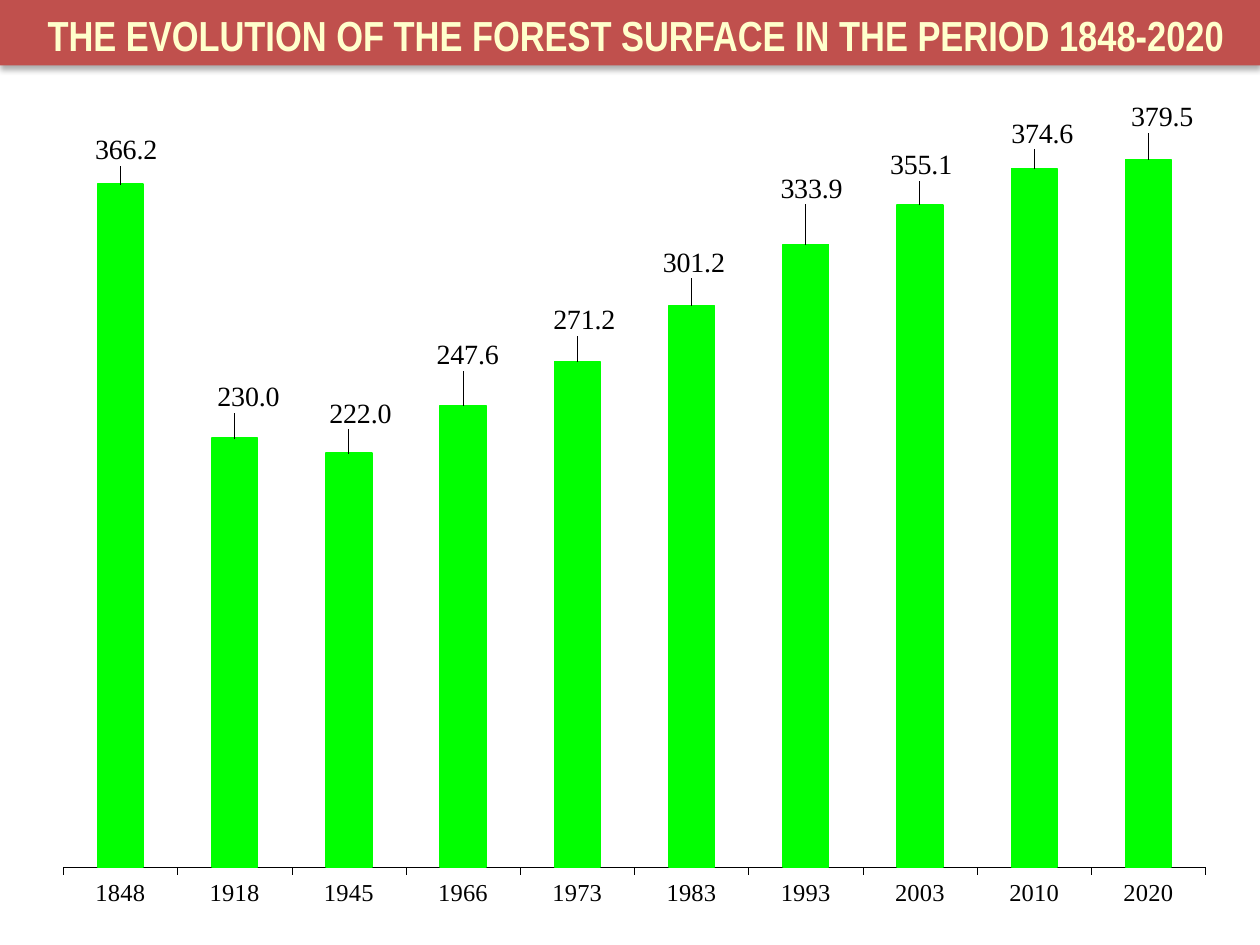
from lxml.etree import SubElement
from pptx import Presentation
from pptx.chart.data import CategoryChartData
from pptx.dml.color import RGBColor
from pptx.enum.chart import XL_CHART_TYPE as ChartType
from pptx.enum.chart import XL_LABEL_POSITION as LabelPosition
from pptx.enum.chart import XL_TICK_LABEL_POSITION as TickLabels
from pptx.enum.chart import XL_TICK_MARK as TickMark
from pptx.enum.text import MSO_ANCHOR as Anchor
from pptx.enum.text import MSO_AUTO_SIZE as AutoSize
from pptx.enum.text import PP_ALIGN as Align
from pptx.oxml import parse_xml
from pptx.oxml.ns import nsdecls, qn
from pptx.util import Inches, Pt

RED = RGBColor(0xC0, 0x50, 0x4D)
CREAM = RGBColor(0xFF, 0xFF, 0xCC)
GREEN = RGBColor(0x00, 0xFF, 0x00)
BLACK = RGBColor(0x00, 0x00, 0x00)
SERIF = "Times New Roman"

HEADING = "THE EVOLUTION OF THE FOREST SURFACE IN THE PERIOD 1848-2020"
FOREST_SURFACE = {
    "1848": 366.2, "1918": 230.0, "1945": 222.0, "1966": 247.6, "1973": 271.2,
    "1983": 301.2, "1993": 333.9, "2003": 355.1, "2010": 374.6, "2020": 379.5,
}
LABEL_SHIFTS = [
    (0.005, -0.016), (0.012, -0.025), (0.01, -0.023), (0.004, -0.036), (0.006, -0.025),
    (0.002, -0.027), (0.005, -0.043), (0.001, -0.023), (0.007, -0.017), (0.012, -0.026),
]
PLOT_AREA = {"x": 0.008, "y": 0.003, "w": 0.992, "h": 0.934}


def style_font(font, size, name=SERIF, color=BLACK, bold=False):
    """Set the size, typeface, colour and weight of a font."""
    font.size, font.name, font.bold = Pt(size), name, bold
    font.color.rgb = color


def add_text(paragraph, text, **style):
    """Append a formatted run to a paragraph."""
    run = paragraph.add_run()
    run.text = text
    style_font(run.font, **style)


def manual_layout(modes, numbers):
    """Return a chart layout element with the given modes and shares."""
    layout = parse_xml(f'<c:layout {nsdecls("c")}/>')
    manual = SubElement(layout, qn("c:manualLayout"))
    for tag, value in (modes | numbers).items():
        SubElement(manual, qn(f"c:{tag}")).set("val", str(value))
    return layout


def fill_banner(title, box):
    """Turn the title placeholder into a shadowed heading banner."""
    title.left, title.top, title.width, title.height = box
    title.fill.solid()
    title.fill.fore_color.rgb = RED
    title.element.spPr.append(parse_xml(
        f'<a:effectLst {nsdecls("a")}><a:outerShdw blurRad="{Pt(3.5)}" dist="{Pt(2.2)}" '
        'dir="5400000" rotWithShape="0"><a:srgbClr val="000000"><a:alpha val="32000"/>'
        "</a:srgbClr></a:outerShdw></a:effectLst>"))
    frame = title.text_frame
    frame.word_wrap, frame.auto_size = True, AutoSize.NONE
    frame.vertical_anchor = Anchor.MIDDLE
    heading = frame.paragraphs[0]
    heading.alignment = Align.CENTER
    for text, size in ((" ", 30), (HEADING, 24)):
        add_text(heading, text, size=size, name="Arial Narrow", color=CREAM, bold=True)


def place_labels(surface):
    """Label every column with its value, shifted from its usual place."""
    labels = surface.data_labels
    labels.show_value = True
    labels.number_format, labels.number_format_is_linked = "0.0", False
    labels.position = LabelPosition.OUTSIDE_END
    style_font(labels.font, 16)
    for index, (x, y) in enumerate(LABEL_SHIFTS):
        label = surface.points[index].data_label
        style_font(label.font, 16)
        label.position = LabelPosition.OUTSIDE_END
    for entry, (x, y) in zip(labels._element.findall(qn("c:dLbl")), LABEL_SHIFTS):
        number_format = parse_xml(
            f'<c:numFmt {nsdecls("c")} formatCode="0.0" sourceLinked="0"/>')
        entry.find(qn("c:idx")).addnext(number_format)
        number_format.addprevious(manual_layout({}, {"x": x, "y": y}))


def add_surface_chart(slide, box):
    """Draw the forest surface by year as columns."""
    data = CategoryChartData(number_format="0.0")
    data.categories = list(FOREST_SURFACE)
    data.add_series("Series 1", list(FOREST_SURFACE.values()))
    chart = slide.shapes.add_chart(ChartType.COLUMN_CLUSTERED, *box, data).chart
    chart.has_legend = chart.has_title = False
    style_font(chart.font, 10.2, name="Calibri", bold=True)

    years = chart.category_axis
    years.tick_label_position = TickLabels.LOW
    years.major_tick_mark, years.minor_tick_mark = TickMark.OUTSIDE, TickMark.NONE
    years.format.line.color.rgb = BLACK
    years.format.line.width = Pt(0.25)
    style_font(years.tick_labels.font, 14)

    scale = chart.value_axis
    scale.minimum_scale, scale.maximum_scale = 0, 407
    scale.has_major_gridlines = scale.visible = False

    columns = chart.plots[0]
    columns.gap_width, columns.vary_by_categories = 150, False
    surface = columns.series[0]
    surface.format.fill.solid()
    surface.format.fill.fore_color.rgb = GREEN
    surface.format.line.color.rgb = GREEN
    surface.format.line.width = Pt(1)
    place_labels(surface)

    plot_area = chart.element.find(".//" + qn("c:plotArea"))
    for old in plot_area.findall(qn("c:layout")):
        plot_area.remove(old)
    modes = {"layoutTarget": "inner", "xMode": "edge", "yMode": "edge"}
    plot_area.insert(0, manual_layout(modes, PLOT_AREA))


def main():
    """Build the slide and save it."""
    deck = Presentation()
    deck.slide_width, deck.slide_height = Inches(10), Inches(7.5)
    slide = deck.slides.add_slide(deck.slide_layouts[5])
    fill_banner(slide.shapes.title, [Inches(n) for n in (0, -0.03, 10, 0.55)])
    add_surface_chart(slide, [Inches(n) for n in (0.43, 0.81, 9.14, 6.48)])
    deck.save("out.pptx")


if __name__ == "__main__":
    main()
